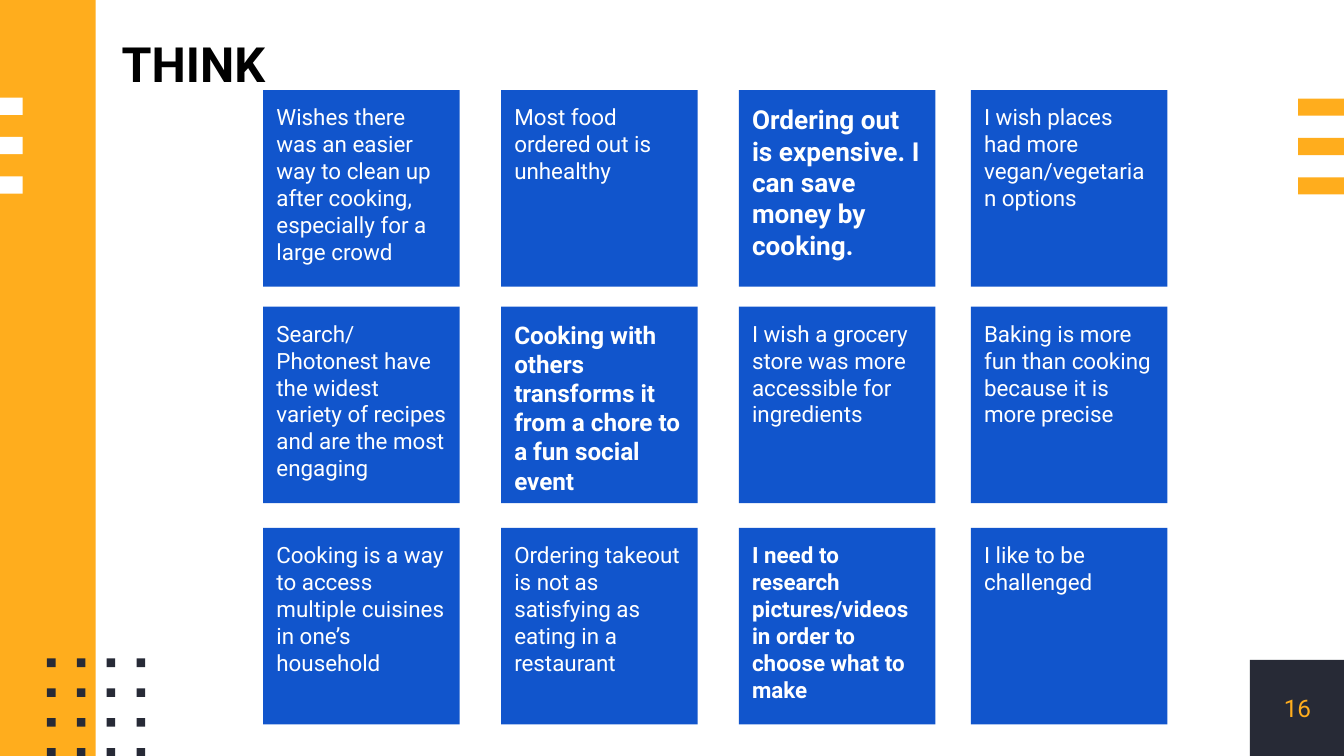
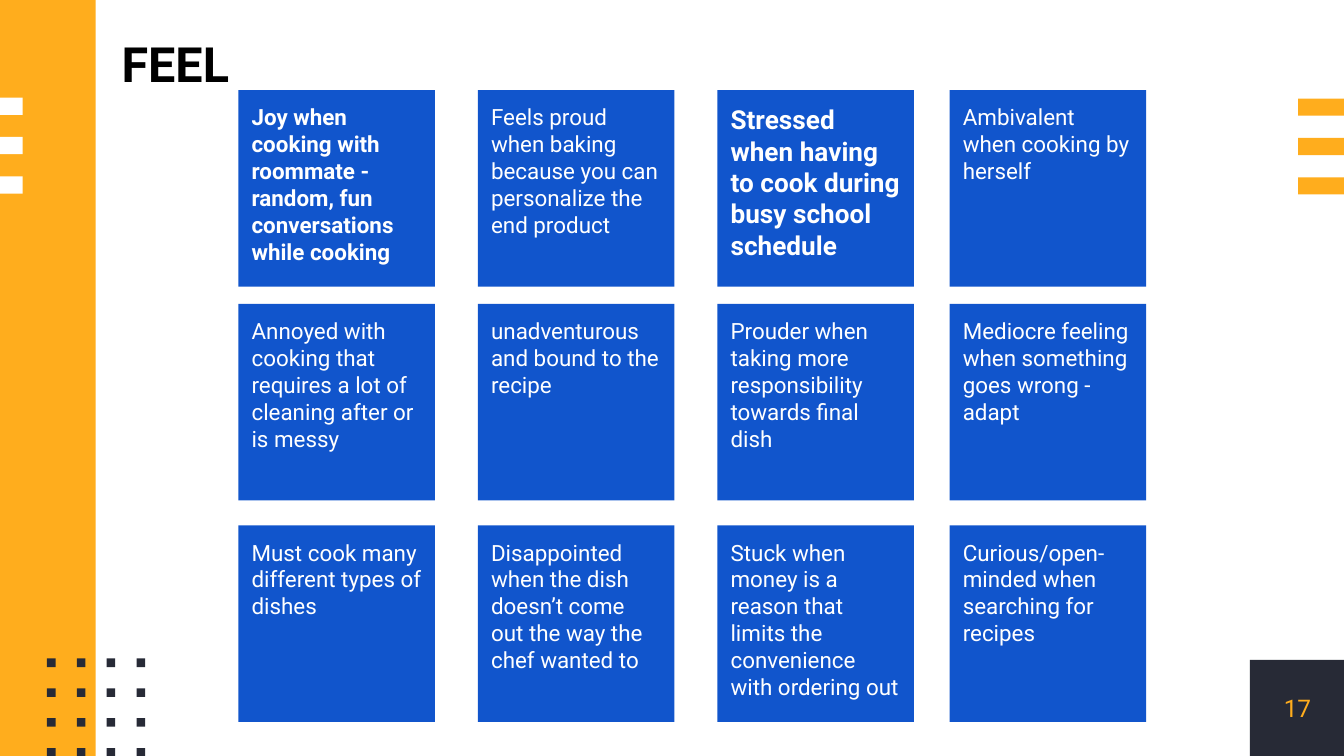
import pptx
import pptx.dml.color
import pptx.enum.shapes
import pptx.enum.text
import pptx.util

Pt = pptx.util.Pt
ALIGN = pptx.enum.text.PP_ALIGN
ANCHOR = pptx.enum.text.MSO_ANCHOR

WIDTH, HEIGHT = 720, 405
ORANGE, NAVY, BLUE = "FFAD1D", "272A36", "1155CC"
WHITE, BLACK = "FFFFFF", "000000"
CARD_SIZE = 105.3


def color(value):
    return pptx.dml.color.RGBColor.from_string(value)


class NotesDeck:
    font = "Roboto"

    def __init__(self):
        self.deck = pptx.Presentation()
        self.deck.slide_width = Pt(WIDTH)
        self.deck.slide_height = Pt(HEIGHT)
        self.page = None

    def new_page(self, title, number):
        self.page = self.deck.slides.add_slide(self.deck.slide_layouts[5])
        self.decorate()
        self.number(number)
        self.title(title)

    def rectangle(self, left, top, width, height, fill):
        box = self.page.shapes.add_shape(
            pptx.enum.shapes.MSO_SHAPE.RECTANGLE,
            Pt(left), Pt(top), Pt(width), Pt(height))
        box.shadow.inherit = False
        box.fill.solid()
        box.fill.fore_color.rgb = color(fill)
        box.line.fill.background()
        return box

    def set_text(self, box, text, size, fill, bold=False, inset=7.2,
                 align=ALIGN.LEFT, anchor=ANCHOR.TOP):
        frame = box.text_frame
        frame.word_wrap = True
        frame.auto_size = pptx.enum.text.MSO_AUTO_SIZE.NONE
        frame.vertical_anchor = anchor
        frame.margin_left = frame.margin_right = Pt(inset)
        frame.margin_top = frame.margin_bottom = Pt(inset)
        frame.text = text
        for para in frame.paragraphs:
            para.alignment = align
            para.font.name = self.font
            para.font.size = Pt(size)
            para.font.bold = bold
            para.font.color.rgb = color(fill)

    def decorate(self):
        self.rectangle(0, 0, 51.3, HEIGHT, ORANGE)
        for step in range(3):
            self.rectangle(0, 52.3 + 21.1 * step, 12.2, 9.2, WHITE)
            self.rectangle(695.4, 52.8 + 21.1 * step, 24.6, 9.2, ORANGE)
        for row in range(4):
            for column in range(4):
                self.rectangle(25.2 + 16 * column, 352.8 + 16 * row,
                               4.6, 4.6, NAVY)

    def number(self, number):
        box = self.rectangle(669.6, 353.5, 51, 51.5, NAVY)
        self.set_text(box, str(number), 13, ORANGE, inset=0,
                      align=ALIGN.CENTER, anchor=ANCHOR.MIDDLE)

    def title(self, text):
        box = self.page.shapes.title
        box.left, box.top = Pt(57.9), Pt(10.8)
        box.width, box.height = Pt(110), Pt(51)
        self.set_text(box, text, 26, BLACK, bold=True)

    def card(self, left, top, text, size=12, bold=False):
        box = self.rectangle(left, top, CARD_SIZE, CARD_SIZE, BLUE)
        self.set_text(box, text, size, WHITE, bold)

    def cards(self, lefts, tops, rows):
        for top, row in zip(tops, rows):
            for left, card in zip(lefts, row):
                self.card(left, top, *card)


THINK_CARDS = [
    [("Wishes there was an easier way to clean up after cooking, "
      "especially for a large crowd",),
     ("Most food ordered out is unhealthy",),
     ("Ordering out is expensive. I can save money by cooking.", 14, True),
     ("I wish places had more vegan/vegetarian options",)],
    [("Search/\nPhotonest have the widest variety of recipes "
      "and are the most engaging",),
     ("Cooking with others transforms it from a chore to a fun social event",
      13, True),
     ("I wish a grocery store was more accessible for ingredients",),
     ("Baking is more fun than cooking because it is more precise",)],
    [("Cooking is a way to access multiple cuisines in one’s household",),
     ("Ordering takeout is not as satisfying as eating in a restaurant",),
     ("I need to research pictures/videos in order to choose what to make",
      12, True),
     ("I like to be challenged",)],
]

FEEL_CARDS = [
    [("Joy when cooking with roommate - random, fun conversations "
      "while cooking", 12, True),
     ("Feels proud when baking because you can personalize "
      "the end product",),
     ("Stressed when having to cook during busy school schedule", 14, True),
     ("Ambivalent when cooking by herself",)],
    [("Annoyed with cooking that requires a lot of cleaning after "
      "or is messy",),
     ("unadventurous and bound to the recipe",),
     ("Prouder when taking more responsibility towards final dish",),
     ("Mediocre feeling when something goes wrong - adapt",)],
    [("Must cook many different types of dishes",),
     ("Disappointed when the dish doesn’t come out the way "
      "the chef wanted to",),
     ("Stuck when money is a reason that limits the convenience "
      "with ordering out",),
     ("Curious/open-minded when searching for recipes",)],
]


def main():
    notes = NotesDeck()
    notes.new_page("THINK", 16)
    notes.cards([141, 268.4, 395.8, 520.1], [48.3, 164.2, 282.8], THINK_CARDS)
    notes.new_page("FEEL", 17)
    notes.cards([127.7, 256, 384.3, 508.7], [48.3, 162.8, 281.4], FEEL_CARDS)
    notes.deck.save("out.pptx")


if __name__ == "__main__":
    main()
